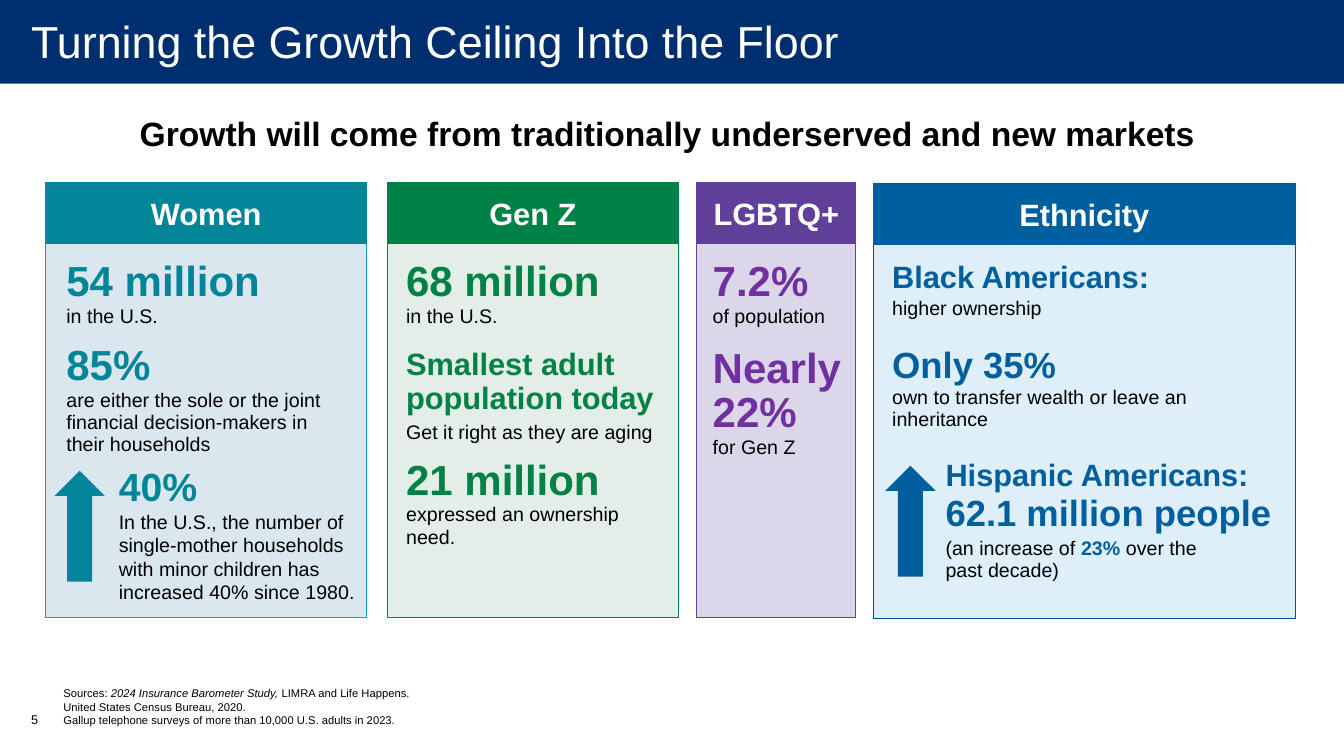
from pptx import Presentation
from pptx import util as u
from pptx.dml.color import RGBColor
from pptx.enum import shapes, text

FONT = "Arial"
BLACK, WHITE, NAVY = "000000", "FFFFFF", "002F70"
TEAL, GREEN, PURPLE, BLUE = "008599", "008145", "7030A0", "005F9F"
CENTER = text.PP_ALIGN.CENTER
MIDDLE, BOTTOM = text.MSO_ANCHOR.MIDDLE, text.MSO_ANCHOR.BOTTOM
RECTANGLE = shapes.MSO_SHAPE.RECTANGLE
CARD_HEIGHT, HEADER_HEIGHT = 4.32, 0.61

CARDS = [
    ("Women", 0.45, 1.81, 3.19, TEAL, "DAE7EE", "0B9EC1"),
    ("Gen Z", 3.84, 1.81, 2.89, GREEN, "E2EEE7", GREEN),
    ("LGBTQ+", 6.91, 1.81, 1.58, "604099", "DCD6EA", "603F99"),
    ("Ethnicity", 8.66, 1.82, 4.19, BLUE, "DEEFFA", "004C9D"),
]


def color(value):
    return RGBColor.from_string(value)


def place(shape, left, top, width, height):
    box = {"left": left, "top": top, "width": width, "height": height}
    for name, value in box.items():
        setattr(shape, name, u.Inches(value))


def format_font(font, size, hex_color, bold=False, italic=False):
    values = {"name": FONT, "size": u.Pt(size), "bold": bold, "italic": italic}
    for name, value in values.items():
        setattr(font, name, value)
    font.color.rgb = color(hex_color)


def add_runs(paragraph, runs):
    for content, *style in runs:
        for index, part in enumerate(content.split("\n")):
            if index:
                paragraph.add_line_break()
            run = paragraph.add_run()
            run.text = part
            format_font(run.font, *style)


def write(frame, paragraphs, anchor=text.MSO_ANCHOR.TOP):
    values = {"word_wrap": True, "auto_size": text.MSO_AUTO_SIZE.NONE,
              "vertical_anchor": anchor}
    for name, value in values.items():
        setattr(frame, name, value)
    for index, (runs, layout) in enumerate(paragraphs):
        paragraph = frame.add_paragraph() if index else frame.paragraphs[0]
        for name, value in layout.items():
            setattr(paragraph, name, value)
        add_runs(paragraph, runs)


def add_text(slide, box, paragraphs, **options):
    shape = slide.shapes.add_textbox(*map(u.Inches, box))
    write(shape.text_frame, paragraphs, **options)


def add_block(slide, kind, box, fill, line=None):
    shape = slide.shapes.add_shape(kind, *map(u.Inches, box))
    shape.shadow.inherit = False
    shape.fill.solid()
    shape.fill.fore_color.rgb = color(fill)
    if line:
        shape.line.color.rgb = color(line)
        shape.line.width = u.Pt(0.75)
    else:
        shape.line.fill.background()
    return shape


def spacing(line, before=0, after=0):
    return {"line_spacing": u.Pt(line), "space_before": u.Pt(before),
            "space_after": u.Pt(after)}


def figure(content, hex_color, size=30, line=32, before=0, after=0):
    return [(content, size, hex_color, True)], spacing(line, before, after)


def detail(content):
    return [(content, 14, BLACK)], spacing(16)


def plain(content, size, hex_color, bold=False, **layout):
    return [(content, size, hex_color, bold)], layout


def add_title(slide):
    banner = add_block(slide, RECTANGLE, (0, -0.03, 13.33, 0.86), NAVY)
    slide.shapes._spTree.insert(2, banner._element)
    title = slide.shapes.title
    place(title, 0.01, -0.08, 13.32, 0.97)
    margins = {"margin_left": 0.3, "margin_right": 0.2,
               "margin_top": 0, "margin_bottom": 0}
    for name, value in margins.items():
        setattr(title.text_frame, name, u.Inches(value))
    heading = plain("Turning the Growth Ceiling Into the Floor", 32, WHITE,
                    alignment=text.PP_ALIGN.LEFT)
    write(title.text_frame, [heading], anchor=MIDDLE)


def add_card(slide, name, left, top, width, header_color, fill, line):
    add_block(slide, RECTANGLE, (left, top, width, CARD_HEIGHT), fill, line)
    header = add_block(slide, RECTANGLE, (left, top, width, HEADER_HEIGHT), header_color)
    write(header.text_frame, [plain(name, 22, WHITE, True, alignment=CENTER)], anchor=MIDDLE)


def add_up_arrow(slide, left, top, fill):
    add_block(slide, shapes.MSO_SHAPE.UP_ARROW, (left, top, 0.5, 1.1), fill)


def add_women(slide):
    add_text(slide, (0.56, 2.53, 2.92, 2.06), [
        figure("54 million", TEAL),
        detail("in the U.S."),
        figure("85%", TEAL, before=12),
        detail("are either the sole or the joint financial decision-makers in their households"),
    ])
    add_text(slide, (1.08, 4.54, 2.56, 1.51), [
        plain("40%", 28, TEAL, True),
        plain("In the U.S., the number of single-mother households with minor "
              "children has increased 40% since 1980.", 14, BLACK),
    ])
    add_up_arrow(slide, 0.54, 4.67, TEAL)


def add_gen_z(slide):
    aging = plain("Get it right as they are aging", 14, BLACK,
                  line_spacing=1.07, space_after=u.Pt(8))
    add_text(slide, (3.93, 2.53, 2.77, 3.24), [
        figure("68 million", GREEN),
        detail("in the U.S."),
        figure("Smallest adult population today", GREEN, 22, 24, 15, 2),
        aging,
        figure("21 million", GREEN, line=22, before=13),
        detail("expressed an ownership need."),
    ])


def add_lgbtq(slide):
    add_text(slide, (6.97, 2.53, 1.55, 2.09), [
        figure("7.2%", PURPLE),
        detail("of population"),
        figure("Nearly 22%", PURPLE, before=14),
        detail("for Gen Z"),
    ])


def add_ethnicity(slide):
    add_text(slide, (8.75, 2.54, 3.95, 1.8), [
        figure("Black Americans:", BLUE, 22, 24, after=2),
        detail("higher ownership"),
        figure("Only 35%", BLUE, 26, before=15),
        detail("own to transfer wealth or leave an inheritance"),
    ])
    increase = [("(an increase of ", 14, BLACK), ("23% ", 14, BLUE, True),
                ("over the \npast decade)", 14, BLACK)]
    add_text(slide, (9.28, 4.5, 3.57, 1.59), [
        figure("Hispanic Americans:", BLUE, 22, 24, after=2),
        figure("62.1 million people", BLUE, 26, 26, before=2),
        (increase, spacing(16, before=2)),
    ])
    add_up_arrow(slide, 8.78, 4.62, BLUE)


def add_footer(slide):
    add_text(slide, (0.21, 7.01, 0.49, 0.4), [plain("5", 9, BLACK)])
    study = [("Sources: ", 8, BLACK),
             ("2024 Insurance Barometer Study, ", 8, BLACK, False, True),
             ("LIMRA and Life Happens.", 8, BLACK)]
    add_text(slide, (0.53, 6.87, 5.85, 0.39), [
        (study, {}),
        plain("United States Census Bureau, 2020.", 8, BLACK),
        plain("Gallup telephone surveys of more than 10,000 U.S. adults in 2023.", 8, BLACK),
    ], anchor=BOTTOM)


def main():
    presentation = Presentation()
    presentation.slide_width = u.Inches(13.33)
    presentation.slide_height = u.Inches(7.5)
    slide = presentation.slides.add_slide(presentation.slide_layouts[5])
    add_title(slide)
    add_text(slide, (0, 1.07, 13.33, 0.5), [
        plain("Growth will come from traditionally underserved and new markets ",
              24, BLACK, True, alignment=CENTER)])
    for card in CARDS:
        add_card(slide, *card)
    add_women(slide)
    add_gen_z(slide)
    add_lgbtq(slide)
    add_ethnicity(slide)
    add_footer(slide)
    presentation.save("out.pptx")


if __name__ == "__main__":
    main()
